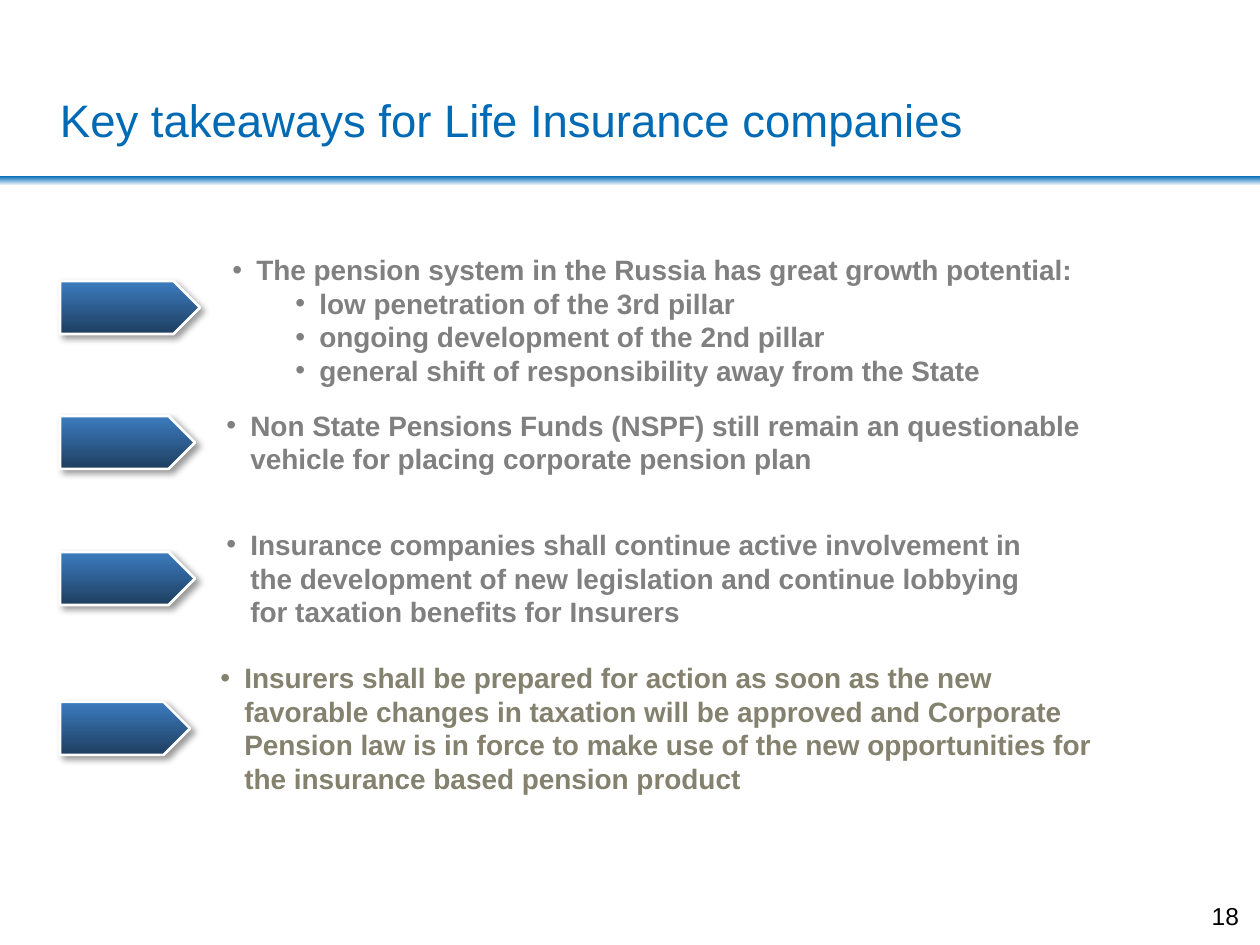
from lxml import etree
from pptx import Presentation
from pptx import util as u
from pptx.dml.color import RGBColor
from pptx.enum import shapes, text
from pptx.oxml import ns

PX = 914400 / 126  # EMU in one px
COLORS = {
    "title": "006AB4", "rule_top": "006AB6", "rule_bottom": "E7F1F8",
    "gray": "808080", "olive": "84816E", "black": "000000", "white": "FFFFFF",
    "arrow_top": "3C7CBF", "arrow_bottom": "1E3E60",
}
LEFT = 60
ARROW_H, BODY_H = 53, 78

# Each takeaway: arrow top and width, body left, top and width, colour, (level, text) lines
TAKEAWAYS = [
    (281, 140, 220, 281, 1018, "gray", [
        (1, "The pension system in the Russia has great growth potential:"),
        (2, "low penetration of the 3rd pillar"),
        (2, "ongoing development of the 2nd pillar"),
        (2, "general shift of responsibility away from the State")]),
    (416, 135, 214, 403, 902, "gray", [
        (1, "Non State Pensions Funds (NSPF) still remain an questionable "
            "vehicle for placing corporate pension plan")]),
    (552, 135, 214, 539, 844, "gray", [
        (1, "Insurance companies shall continue active involvement in the development "
            "of new legislation and continue lobbying for taxation benefits for Insurers")]),
    (702, 130, 208, 689, 907, "olive", [
        (1, "Insurers shall be prepared for action as soon as the new favorable changes "
            "in taxation will be approved and Corporate Pension law is in force to make "
            "use of the new opportunities for the insurance based pension product")]),
]


def px(*lengths):
    return [round(n * PX) for n in lengths]


def color(name):
    return RGBColor.from_string(COLORS[name])


def child(parent, tag, **attrs):
    return etree.SubElement(parent, ns.qn(tag), attrs)


def write(p, words, size, ink, bold=False, font="Arial"):
    r = p.add_run()
    r.text = words
    r.font.name, r.font.size, r.font.bold = font, u.Pt(size), bold
    r.font.color.rgb = color(ink)


class Deck:
    def __init__(self, width, height):
        self.prs = Presentation()
        self.prs.slide_width, self.prs.slide_height = px(width, height)
        self.s = self.prs.slides.add_slide(self.prs.slide_layouts[6])

    def frame(self, parent, box, anchor, inset=0):
        tf = parent.shapes.add_textbox(*px(*box)).text_frame
        tf.word_wrap = True
        tf.vertical_anchor = anchor
        tf.margin_left = u.Inches(inset)
        tf.margin_top = tf.margin_right = tf.margin_bottom = 0
        return tf

    def line(self, box, words, size, ink, anchor, align=text.PP_ALIGN.LEFT):
        p = self.frame(self.s, box, anchor).paragraphs[0]
        p.alignment = align
        write(p, words, size, ink)

    def bullets(self, parent, box, ink, lines):
        tf = self.frame(parent, box, text.MSO_ANCHOR.MIDDLE, inset=0.1)
        for i, (level, words) in enumerate(lines):
            p = tf.add_paragraph() if i else tf.paragraphs[0]
            p.level = level
            pPr = p._p.get_or_add_pPr()
            pPr.set("marL", str(u.Inches(0.19 + 0.5 * (level - 1))))
            pPr.set("indent", str(u.Inches(-0.19)))
            child(pPr, "a:buFont", typeface="Arial")
            child(pPr, "a:buChar", char="•")
            write(p, words, 16, ink, bold=True)

    def gradient(self, parent, kind, box, top, bottom):
        sp = parent.shapes.add_shape(kind, *px(*box))
        sp.shadow.inherit = False
        sp.fill.gradient()
        sp.fill.gradient_angle = 270
        for stop, position, name in zip(sp.fill.gradient_stops, (0, 1), (top, bottom)):
            stop.position = position
            stop.color.rgb = color(name)
        sp.line.fill.background()
        return sp

    def arrow(self, parent, box):
        sp = self.gradient(parent, shapes.MSO_SHAPE.PENTAGON, box, "arrow_top", "arrow_bottom")
        sp.line.color.rgb = color("white")
        sp.line.width = u.Pt(1.5)
        effects = sp._element.spPr.find(ns.qn("a:effectLst"))
        shadow = child(effects, "a:outerShdw", blurRad=str(u.Pt(4)), dist=str(u.Pt(3)),
                       dir=str(45 * 60000), algn="tl", rotWithShape="0")
        child(child(shadow, "a:srgbClr", val=COLORS["black"]), "a:alpha", val="40000")


def main():
    deck = Deck(1260, 945)

    # Header
    deck.gradient(deck.s, shapes.MSO_SHAPE.RECTANGLE, (0, 176, 1260, 9),
                  "rule_top", "rule_bottom")
    deck.line((LEFT, 62, 1149, 115), "Key takeaways for Life Insurance companies",
              26, "title", text.MSO_ANCHOR.MIDDLE)

    # Page number
    deck.line((1149, 864, 90, 66), "18", 14, "black",
              text.MSO_ANCHOR.BOTTOM, text.PP_ALIGN.RIGHT)

    # Takeaways, each an arrow grouped with its text
    for arrow_y, arrow_w, x, y, w, ink, lines in TAKEAWAYS:
        group = deck.s.shapes.add_group_shape()
        row = group
        deck.bullets(row, (x, y, w, BODY_H), ink, lines)
        deck.arrow(row, (LEFT, arrow_y, arrow_w, ARROW_H))

    deck.prs.save("out.pptx")


if __name__ == "__main__":
    main()
